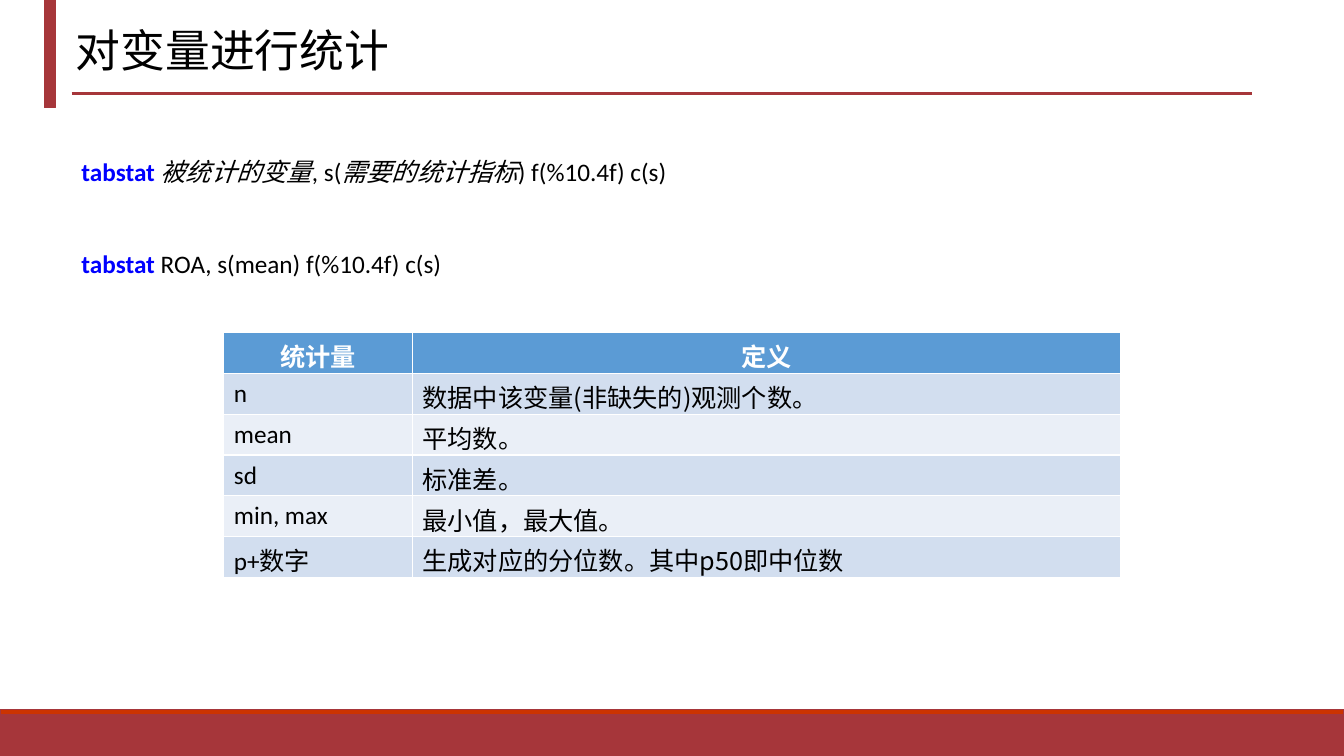
from lxml.etree import SubElement
from pptx import Presentation
from pptx.dml.color import RGBColor
from pptx.enum.shapes import MSO_CONNECTOR as Connector, MSO_SHAPE as Shape
from pptx.enum.text import MSO_ANCHOR as Anchor, MSO_AUTO_SIZE as AutoSize, PP_ALIGN as Align
from pptx.oxml.ns import qn
from pptx.util import Pt

PX = 9144
COLORS = {
    "brand": "A6363A", "strip": "CC3300", "command": "0000FF",
    "text": "000000", "white": "FFFFFF",
    "header": "5B9BD5", "odd": "D2DEEF", "even": "EAEFF7",
}
LATIN, CJK = "Calibri", "Noto Sans CJK SC"

SYNTAX = [
    [("tabstat ", "command"), ("被统计的变量", "italic"), (", s(", "plain"),
     ("需要的统计指标", "italic"), (") f(%10.4f) c(s)", "plain")],
    [("tabstat", "command"), (" ROA, s(mean) f(%10.4f) c(s)", "plain")],
]
STATISTICS = [
    ("统计量", "定义"),
    ("n", "数据中该变量(非缺失的)观测个数。"),
    ("mean", "平均数。"),
    ("sd", "标准差。"),
    ("min, max", "最小值，最大值。"),
    ("p+数字", "生成对应的分位数。其中p50即中位数"),
]


def px(*lengths):
    return [length * PX for length in lengths]


def rgb(name):
    return RGBColor.from_string(COLORS[name])


def set_font(paragraph, size, name, color=None, bold=None):
    font = paragraph.font
    font.size, font.name, font.bold = Pt(size), name, bold
    if color:
        font.color.rgb = rgb(color)
    defaults = paragraph._p.get_or_add_pPr().get_or_add_defRPr()
    SubElement(defaults, qn("a:ea")).set("typeface", CJK)


def add_bar(slide, box, fill):
    bar = slide.shapes.add_shape(Shape.RECTANGLE, *px(*box))
    bar.shadow.inherit = False
    bar.fill.solid()
    bar.fill.fore_color.rgb = rgb(fill)
    bar.line.color.rgb = rgb("brand")
    bar.line.width = Pt(1)


def add_footer(slide, left, top, width, height):
    strip = 5
    add_bar(slide, (left, top + strip, width, height - strip), "brand")
    add_bar(slide, (left, top, width, strip), "strip")


def add_heading(slide, left, top, width, height):
    add_bar(slide, (left, top, 11, height), "brand")
    rule_y = top + 93
    rule = slide.shapes.add_connector(
        Connector.STRAIGHT, *px(left + 27, rule_y, left + width, rule_y))
    rule.line.color.rgb = rgb("brand")
    rule.line.width = Pt(2.25)
    SubElement(rule._element.spPr, qn("a:effectLst"))

    title = slide.shapes.title
    title.left, title.top, title.width, title.height = px(left + 21, top - 2, 862, 109)
    frame = title.text_frame
    frame.text = "对变量进行统计"
    frame.auto_size = AutoSize.NONE
    frame.vertical_anchor = Anchor.MIDDLE
    paragraph = frame.paragraphs[0]
    paragraph.alignment = Align.LEFT
    paragraph.line_spacing = 0.9
    set_font(paragraph, 32, CJK, "text")


def add_syntax(slide, left, top, width, height):
    frame = slide.shapes.add_textbox(*px(left, top, width, height)).text_frame
    frame.word_wrap = True
    for index, pieces in enumerate(SYNTAX):
        paragraph = frame.add_paragraph() if index else frame.paragraphs[0]
        paragraph.space_before = Pt(44 * index)
        set_font(paragraph, 18, LATIN)
        for text, role in pieces:
            run = paragraph.add_run()
            run.text = text
            run.font.bold = role == "command"
            run.font.italic = role == "italic"
            run.font.color.rgb = rgb("command" if role == "command" else "text")


def add_statistics(slide, left, top, width, height):
    table = slide.shapes.add_table(
        len(STATISTICS), 2, *px(left, top, width, height)).table
    name_width = 187
    table.columns[0].width, table.columns[1].width = px(name_width, width - name_width)
    for row, texts in enumerate(STATISTICS):
        header = row == 0
        fill = "header" if header else "odd" if row % 2 else "even"
        for column, text in enumerate(texts):
            cell = table.cell(row, column)
            cell.text = text
            cell.fill.solid()
            cell.fill.fore_color.rgb = rgb(fill)
            paragraph = cell.text_frame.paragraphs[0]
            paragraph.alignment = Align.CENTER if header else Align.LEFT
            set_font(paragraph, 18, CJK if header or column else LATIN,
                     "white" if header else "text", header)


def main():
    deck = Presentation()
    deck.slide_width, deck.slide_height = px(1333, 750)
    slide = deck.slides.add_slide(deck.slide_layouts[5])
    add_footer(slide, 0, 704, 1333, 46)
    add_heading(slide, 44, 0, 1198, 107)
    add_syntax(slide, 71, 150, 1171, 131)
    add_statistics(slide, 222, 330, 889, 243)
    deck.save("out.pptx")


if __name__ == "__main__":
    main()
